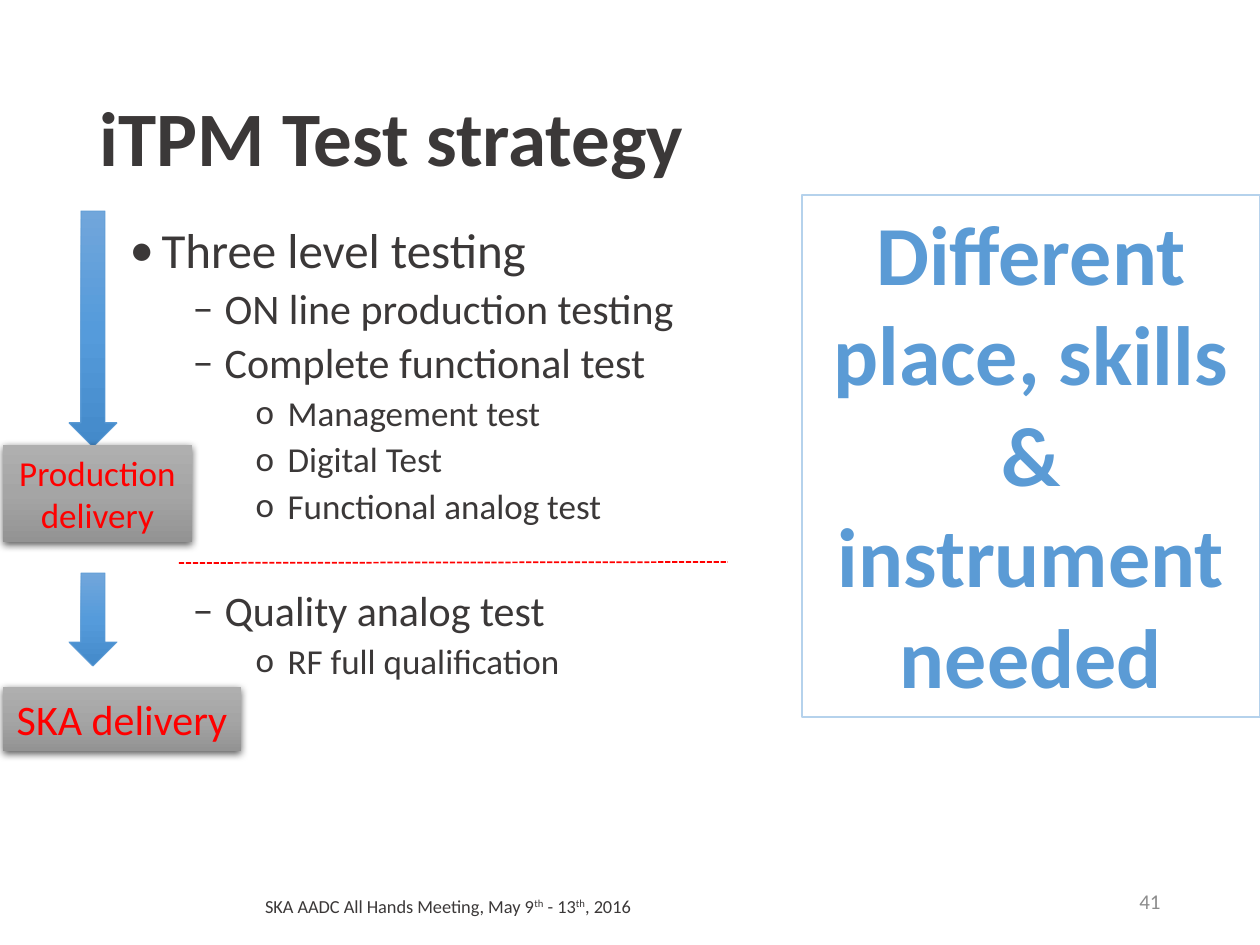
import lxml.etree
import pptx
import pptx.dml.color
import pptx.enum.dml
import pptx.enum.shapes
import pptx.enum.text
import pptx.oxml
import pptx.oxml.ns
import pptx.util

SCALE = 914400 / 126
FONT = "Calibri"
COLORS = {
    "ink": "3B3838", "blue": "5B9BD5", "pale": "B5D2EC", "red": "FF0000",
    "number": "8C8C8C", "shadow": "000000",
}
GRADIENTS = {
    "arrow": ["71A6DB", "559BDB", "448ACA"],
    "label": ["AFAFAF", "A5A5A5", "939393"],
}
LEVELS = [
    {"bullet": "•", "size": 28, "left": 32, "before": 0},
    {"bullet": "–", "size": 24, "left": 95, "before": 5},
    {"bullet": "o", "size": 20, "left": 158, "before": 5},
]
HANGING = 32
SECTION_GAP = 36
ITEMS = [
    (0, "Three level testing"),
    (1, "ON line production testing"),
    (1, "Complete functional test"),
    (2, "Management test"),
    (2, "Digital Test"),
    (2, "Functional analog test"),
    (1, "Quality analog test"),
    (2, "RF full qualification"),
]
FIRST_AFTER_DIVIDER = 6
ALIGN = pptx.enum.text.PP_ALIGN
ANCHOR = pptx.enum.text.MSO_ANCHOR
SHAPE = pptx.enum.shapes.MSO_SHAPE


def px(length):
    return pptx.util.Emu(round(length * SCALE))


def rgb(name):
    return pptx.dml.color.RGBColor.from_string(COLORS[name])


def assign(target, values):
    for name, value in values.items():
        setattr(target, name, value)


def place(shape, box):
    assign(shape, dict(zip(("left", "top", "width", "height"), map(px, box))))


def style(font, size, color, bold=False):
    assign(font, {"name": FONT, "size": pptx.util.Pt(size), "bold": bold})
    font.color.rgb = rgb(color)


def drawing(tag, markup, attributes=""):
    return pptx.oxml.parse_xml(
        f'<a:{tag} {pptx.oxml.ns.nsdecls("a")} {attributes}>{markup}</a:{tag}>'
    )


def add_gradient(shape, name):
    stops = "".join(
        f'<a:gs pos="{index * 50000}"><a:srgbClr val="{color}"/></a:gs>'
        for index, color in enumerate(GRADIENTS[name])
    )
    markup = f'<a:gsLst>{stops}</a:gsLst><a:lin ang="5400000" scaled="0"/>'
    shape.element.spPr.insert(2, drawing("gradFill", markup))


def add_shadow(shape):
    effects = shape.element.spPr.find(pptx.oxml.ns.qn("a:effectLst"))
    color = f'<a:srgbClr val="{COLORS["shadow"]}"><a:alpha val="63000"/></a:srgbClr>'
    effects.append(drawing(
        "outerShdw", color, 'blurRad="57150" dist="19050" dir="5400000" rotWithShape="0"'
    ))


def add_panel(page, box, text, size, color, bold=False, wrap=True):
    panel = page.shapes.add_shape(SHAPE.RECTANGLE, *map(px, box))
    panel.shadow.inherit = False
    assign(panel.text_frame, {"word_wrap": wrap, "vertical_anchor": ANCHOR.TOP})
    para = panel.text_frame.paragraphs[0]
    assign(para, {"text": text, "alignment": ALIGN.CENTER})
    style(para.runs[0].font, size, color, bold)
    return panel


def add_title(page, box):
    title = page.shapes.title
    place(title, box)
    assign(title.text_frame, {
        "text": "iTPM Test strategy", "vertical_anchor": ANCHOR.MIDDLE,
        "auto_size": pptx.enum.text.MSO_AUTO_SIZE.NONE,
    })
    para = title.text_frame.paragraphs[0]
    assign(para, {"alignment": ALIGN.LEFT, "line_spacing": 0.9})
    style(para.runs[0].font, 44, "ink", True)


def add_list(page, box):
    body = page.placeholders[1]
    place(body, box)
    frame = body.text_frame
    frame.auto_size = pptx.enum.text.MSO_AUTO_SIZE.NONE
    frame.text = "\n".join(text for _, text in ITEMS)
    for index, (para, (depth, _)) in enumerate(zip(frame.paragraphs, ITEMS)):
        level = LEVELS[depth]
        before = SECTION_GAP if index == FIRST_AFTER_DIVIDER else level["before"]
        assign(para, {
            "level": depth, "line_spacing": 0.9,
            "space_before": pptx.util.Pt(before),
        })
        properties = para._p.get_or_add_pPr()
        properties.set("marL", str(px(level["left"])))
        properties.set("indent", str(-px(HANGING)))
        properties.append(drawing("buFont", "", f'typeface="{FONT}"'))
        properties.append(drawing("buChar", "", f'char="{level["bullet"]}"'))
        style(para.runs[0].font, level["size"], "ink")


def add_remark(page, box):
    text = "Different place, skills & instrument needed"
    remark = add_panel(page, box, text, 48, "blue", bold=True)
    remark.fill.background()
    remark.line.color.rgb = rgb("pale")
    remark.line.width = pptx.util.Pt(0.75)


def add_arrow(page, box):
    arrow = page.shapes.add_shape(SHAPE.DOWN_ARROW, *map(px, box))
    arrow.shadow.inherit = False
    add_gradient(arrow, "arrow")
    arrow.line.color.rgb = rgb("blue")
    arrow.line.width = pptx.util.Pt(0.5)


def add_delivery(page, box, text, size, wrap):
    label = add_panel(page, box, text, size, "red", wrap=wrap)
    add_gradient(label, "label")
    label.line.fill.background()
    add_shadow(label)


def add_flow(page, box):
    left, top, _, _ = box
    arrow_left, arrow_width = left + 66, 48
    add_arrow(page, (arrow_left, top, arrow_width, 236))
    add_delivery(page, (left, top + 476, 238, 64), "SKA delivery", 24, False)
    add_arrow(page, (arrow_left, top + 362, arrow_width, 93))
    add_delivery(page, (left, top + 234, 189, 97), "Production delivery", 20, True)


def add_divider(page, box):
    left, top, width, height = box
    divider = page.shapes.add_connector(
        pptx.enum.shapes.MSO_CONNECTOR.STRAIGHT,
        px(left), px(top + height), px(left + width), px(top),
    )
    divider.line.color.rgb = rgb("red")
    assign(divider.line, {
        "width": pptx.util.Pt(1),
        "dash_style": pptx.enum.dml.MSO_LINE.SQUARE_DOT,
    })
    lxml.etree.SubElement(divider.element.spPr, pptx.oxml.ns.qn("a:effectLst"))


def add_footer(page, box, parts, size, color, alignment):
    footer = page.shapes.add_textbox(*map(px, box))
    assign(footer.text_frame, {"word_wrap": True, "vertical_anchor": ANCHOR.MIDDLE})
    para = footer.text_frame.paragraphs[0]
    para.alignment = alignment
    for part in parts:
        span = para.add_run()
        span.text = part
        style(span.font, size, color)
        if part == "th":
            span._r.get_or_add_rPr().set("baseline", "30000")


def main():
    deck = pptx.Presentation()
    assign(deck, {"slide_width": px(1260), "slide_height": px(945)})
    page = deck.slides.add_slide(deck.slide_layouts[1])
    meeting = ["SKA AADC All Hands Meeting, May 9", "th", " - 13", "th", ", 2016"]
    add_title(page, (87, 50, 1086, 183))
    add_list(page, (117, 220, 1134, 567))
    add_remark(page, (802, 195, 458, 522))
    add_flow(page, (3, 211, 238, 541))
    add_divider(page, (179, 562, 549, 1))
    add_footer(page, (201, 881, 494, 50), meeting, 10.5, "ink", ALIGN.CENTER)
    add_footer(page, (889, 876, 284, 50), ["41"], 12, "number", ALIGN.RIGHT)
    deck.save("out.pptx")


if __name__ == "__main__":
    main()
